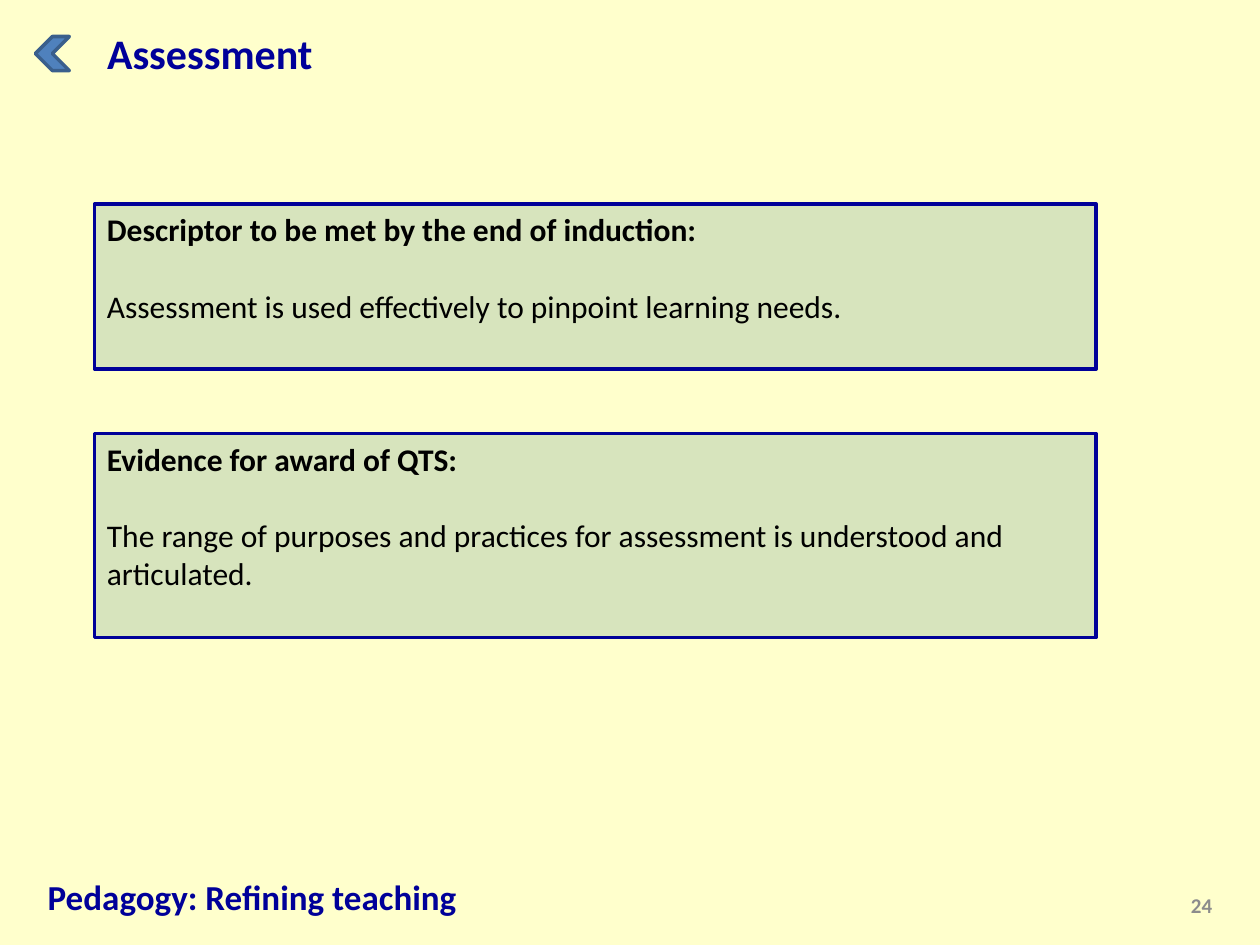
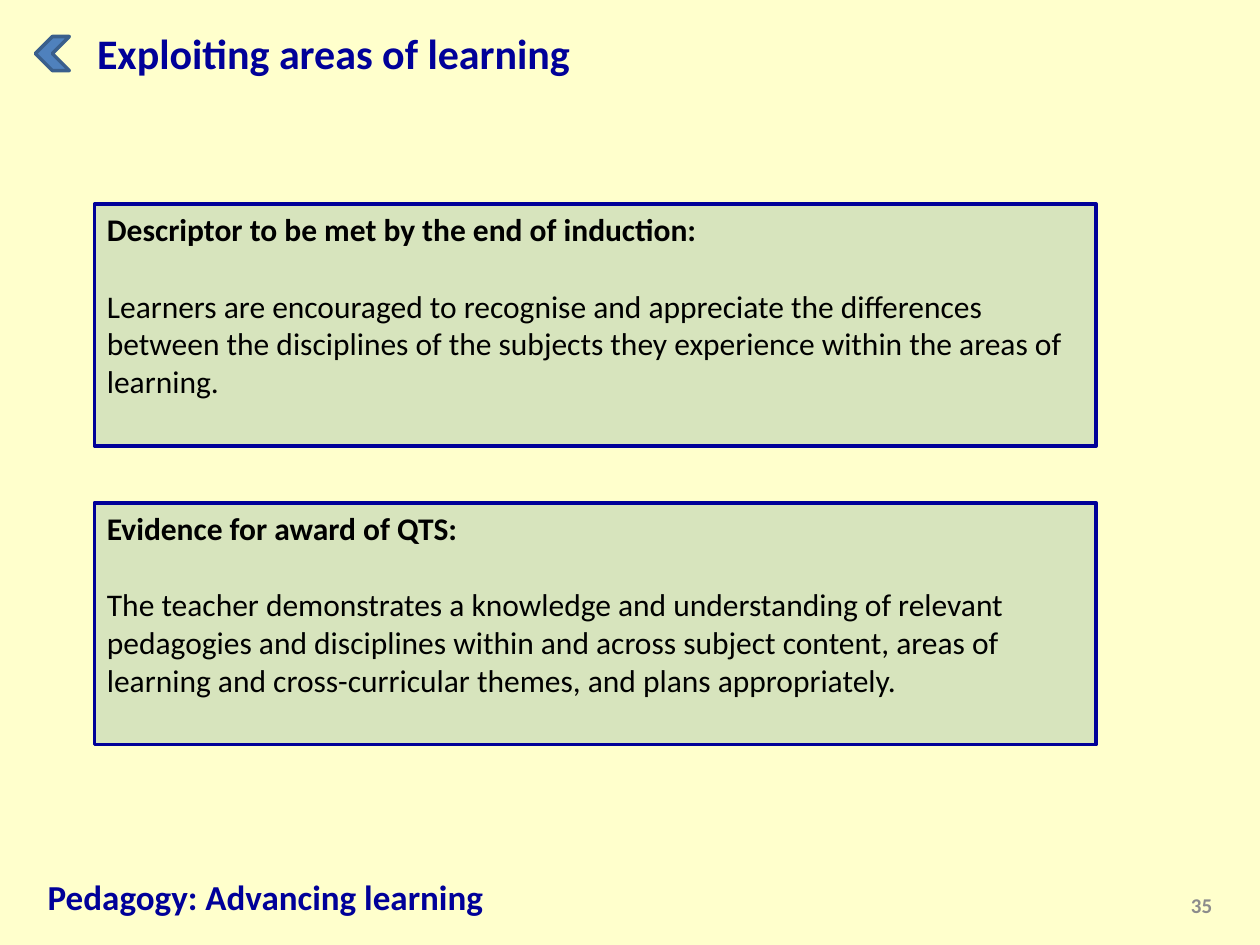
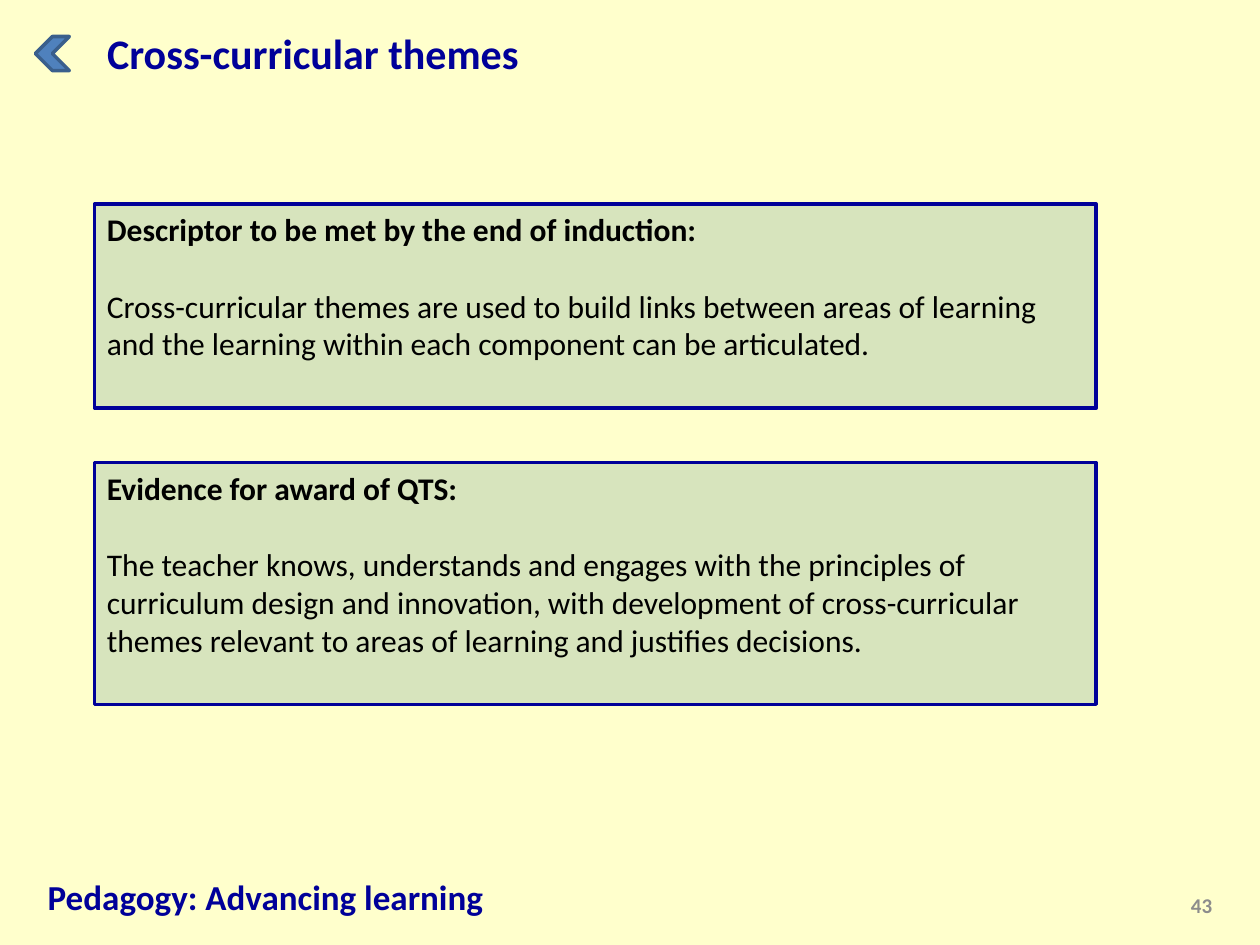
from pptx import Presentation
from pptx.dml.color import RGBColor
from pptx.enum import shapes, text
from pptx.util import Inches, Pt

THEME = {
    "font": "Calibri",
    "page": "FFFFCC", "panel": "D7E4BD", "navy": "000099", "ink": "000000",
    "arrow": "4F81BD", "edge": "3A5F8C", "grey": "8C8C8C",
    "title": 24, "footer": 20, "body": 18, "number": 12, "gap": 22, "line": 2,
}
LEFT, ALIGN = 0.75, text.PP_ALIGN
HEADS = ("Descriptor to be met by the end of induction:",
         "Evidence for award of QTS:")

# Each panel is (top, height, text).
SLIDES = [
    {"title": "Assessment", "left": LEFT, "number": 24,
     "footer": "Pedagogy: Refining teaching",
     "panels": [
         (1.62, 1.31, "Assessment is used effectively to pinpoint learning needs."),
         (3.44, 1.62, "The range of purposes and practices for assessment is "
                      "understood and articulated.")]},
    {"title": "Exploiting areas of learning", "left": 0.67, "number": 35,
     "footer": "Pedagogy: Advancing learning",
     "panels": [
         (1.62, 1.92, "Learners are encouraged to recognise and appreciate the "
                      "differences between the disciplines of the subjects they "
                      "experience within the areas of learning."),
         (3.99, 1.92, "The teacher demonstrates a knowledge and understanding of "
                      "relevant pedagogies and disciplines within and across "
                      "subject content, areas of learning and cross-curricular "
                      "themes, and plans appropriately.")]},
    {"title": "Cross-curricular themes", "left": LEFT, "number": 43,
     "footer": "Pedagogy: Advancing learning",
     "panels": [
         (1.62, 1.62, "Cross-curricular themes are used to build links between "
                      "areas of learning and the learning within each component "
                      "can be articulated."),
         (3.67, 1.92, "The teacher knows, understands and engages with the "
                      "principles of curriculum design and innovation, with "
                      "development of cross-curricular themes relevant to areas "
                      "of learning and justifies decisions.")]},
]


def color(name):
    return RGBColor.from_string(THEME[name])


def inches(box):
    return [Inches(v) for v in box]


def place(shape, box):
    for name, value in zip(("left", "top", "width", "height"), inches(box)):
        setattr(shape, name, value)


def setup(frame, anchor=text.MSO_ANCHOR.TOP):
    form = {"word_wrap": True, "vertical_anchor": anchor,
            "auto_size": text.MSO_AUTO_SIZE.NONE}
    for name, value in form.items():
        setattr(frame, name, value)


def write(para, words, size, ink, bold=True, align=ALIGN.LEFT):
    para.alignment = align
    run = para.add_run()
    run.text = words
    form = {"name": THEME["font"], "size": Pt(THEME[size]), "bold": bold}
    for name, value in form.items():
        setattr(run.font, name, value)
    run.font.color.rgb = color(ink)


def draw(slide, kind, box, fill, line):
    shape = slide.shapes.add_shape(kind, *inches(box))
    shape.shadow.inherit = False
    shape.fill.solid()
    shape.fill.fore_color.rgb = color(fill)
    shape.line.color.rgb = color(line)
    shape.line.width = Pt(THEME["line"])
    return shape


def label(slide, box, words, size, ink, align=ALIGN.LEFT,
          anchor=text.MSO_ANCHOR.TOP):
    frame = slide.shapes.add_textbox(*inches(box)).text_frame
    setup(frame, anchor)
    write(frame.paragraphs[0], words, size, ink, align=align)


def header(slide, words, left):
    """Title with the back arrow beside it."""
    title = slide.shapes.title
    place(title, (left, 0.17, 6.17, 0.5))
    setup(title.text_frame)
    write(title.text_frame.paragraphs[0], words, "title", "navy")
    arrow = draw(slide, shapes.MSO_SHAPE.CHEVRON, (0.28, 0.29, 0.27, 0.27),
                 "arrow", "edge")
    arrow.rotation = 180


def panel(slide, box, head, words):
    frame = draw(slide, shapes.MSO_SHAPE.RECTANGLE, box, "panel", "navy").text_frame
    setup(frame)
    write(frame.paragraphs[0], head, "body", "ink")
    para = frame.add_paragraph()
    para.space_before = Pt(THEME["gap"])
    write(para, words, "body", "ink", bold=False)


def footer(slide, words, number):
    label(slide, (0.28, 6.9, 9.02, 0.44), words, "footer", "navy")
    label(slide, (7.39, 6.98, 2.33, 0.4), str(number), "number", "grey",
          ALIGN.RIGHT, text.MSO_ANCHOR.MIDDLE)


def build(deck, page):
    slide = deck.slides.add_slide(deck.slide_layouts.get_by_name("Title Only"))
    header(slide, page["title"], page["left"])
    for head, (top, height, words) in zip(HEADS, page["panels"]):
        panel(slide, (LEFT, top, 7.95, height), head, words)
    footer(slide, page["footer"], page["number"])


def main():
    deck = Presentation()
    deck.slide_width, deck.slide_height = Inches(10), Inches(7.5)
    fill = deck.slide_master.background.fill
    fill.solid()
    fill.fore_color.rgb = color("page")
    for page in SLIDES:
        build(deck, page)
    deck.save("out.pptx")


if __name__ == "__main__":
    main()
